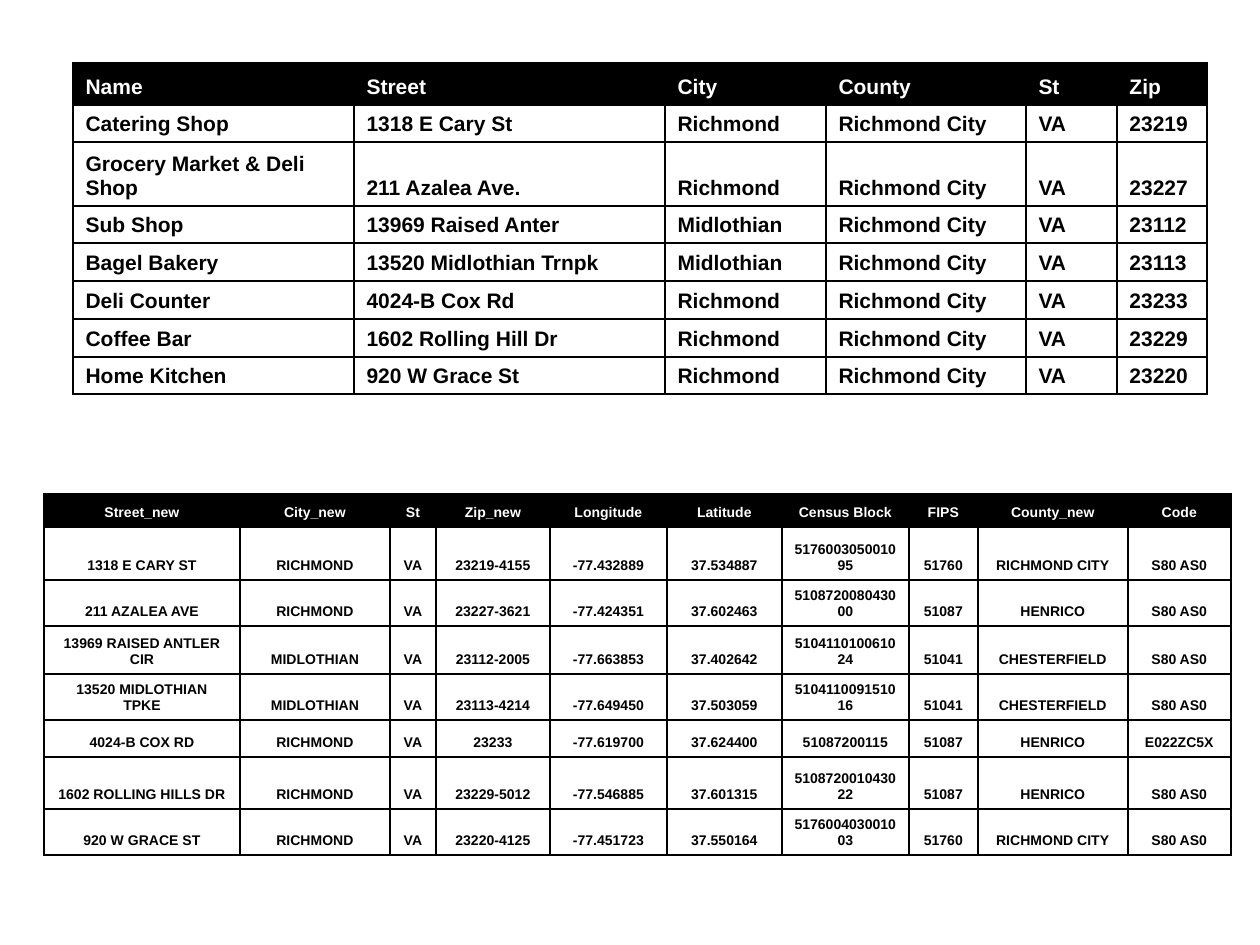
import pptx
import pptx.util
import pptx.dml.color
import pptx.enum.text
import pptx.oxml
import pptx.oxml.ns

SCALE = 914400 / 126
FONT = "Arial"
HUES = {"ink": "000000", "head": "FFFFFF"}
ALIGN = pptx.enum.text.PP_ALIGN

OLD_COLS = [281, 311, 161, 200, 91, 90]
OLD_ROWS = [42, 37, 64, 37, 38, 38, 38, 37]
OLD_DATA = [
    ["Name", "Street", "City", "County", "St", "Zip"],
    ["Catering Shop", "1318 E Cary St", "Richmond", "Richmond City", "VA", "23219"],
    ["Grocery Market & Deli Shop", "211 Azalea Ave.", "Richmond", "Richmond City", "VA", "23227"],
    ["Sub Shop", "13969 Raised Anter", "Midlothian", "Richmond City", "VA", "23112"],
    ["Bagel Bakery", "13520 Midlothian Trnpk", "Midlothian", "Richmond City", "VA", "23113"],
    ["Deli Counter", "4024-B Cox Rd", "Richmond", "Richmond City", "VA", "23233"],
    ["Coffee Bar", "1602 Rolling Hill Dr", "Richmond", "Richmond City", "VA", "23229"],
    ["Home Kitchen", "920 W Grace St", "Richmond", "Richmond City", "VA", "23220"],
]

NEW_COLS = [196, 150, 46, 114, 117, 115, 127, 69, 150, 103]
NEW_ROWS = [33, 53, 46, 48, 46, 37, 52, 46]
NEW_DATA = [
    ["Street_new", "City_new", "St", "Zip_new", "Longitude", "Latitude",
     "Census Block", "FIPS", "County_new", "Code"],
    ["1318 E CARY ST", "RICHMOND", "VA", "23219-4155", "-77.432889", "37.534887",
     "517600305001095", "51760", "RICHMOND CITY", "S80 AS0"],
    ["211 AZALEA AVE", "RICHMOND", "VA", "23227-3621", "-77.424351", "37.602463",
     "510872008043000", "51087", "HENRICO", "S80 AS0"],
    ["13969 RAISED ANTLER CIR", "MIDLOTHIAN", "VA", "23112-2005", "-77.663853", "37.402642",
     "510411010061024", "51041", "CHESTERFIELD", "S80 AS0"],
    ["13520 MIDLOTHIAN TPKE", "MIDLOTHIAN", "VA", "23113-4214", "-77.649450", "37.503059",
     "510411009151016", "51041", "CHESTERFIELD", "S80 AS0"],
    ["4024-B COX RD", "RICHMOND", "VA", "23233", "-77.619700", "37.624400",
     "51087200115", "51087", "HENRICO", "E022ZC5X"],
    ["1602 ROLLING HILLS DR", "RICHMOND", "VA", "23229-5012", "-77.546885", "37.601315",
     "510872001043022", "51087", "HENRICO", "S80 AS0"],
    ["920 W GRACE ST", "RICHMOND", "VA", "23220-4125", "-77.451723", "37.550164",
     "517600403001003", "51760", "RICHMOND CITY", "S80 AS0"],
]


def emu(px):
    return pptx.util.Emu(round(px * SCALE))


def hue(name):
    return pptx.dml.color.RGBColor.from_string(HUES[name])


def frame(cell):
    props = cell._tc.get_or_add_tcPr()
    for side in ("lnL", "lnR", "lnT", "lnB"):
        props.append(pptx.oxml.parse_xml(
            f'<a:{side} {pptx.oxml.ns.nsdecls("a")} w="12700"><a:solidFill>'
            f'<a:srgbClr val="{HUES["ink"]}"/></a:solidFill></a:{side}>'))


def fill_cell(cell, text, size, align, is_head):
    frame(cell)
    cell.vertical_anchor = pptx.enum.text.MSO_ANCHOR.BOTTOM
    if is_head:
        cell.fill.solid()
        cell.fill.fore_color.rgb = hue("ink")
    else:
        cell.fill.background()
    para = cell.text_frame.paragraphs[0]
    para.alignment = align
    run = para.add_run()
    run.text = text
    run.font.name = FONT
    run.font.size = pptx.util.Pt(size)
    run.font.bold = True
    run.font.color.rgb = hue("head" if is_head else "ink")


def add_grid(slide, box, cols, rows, data, size, align):
    table = slide.shapes.add_table(len(rows), len(cols), *map(emu, box)).table
    table.first_row = False
    table.horz_banding = False
    for col, width in zip(table.columns, cols):
        col.width = emu(width)
    for row, height in zip(table.rows, rows):
        row.height = emu(height)
    for r, line in enumerate(data):
        for c, text in enumerate(line):
            fill_cell(table.cell(r, c), text, size, align, r == 0)


def add_old(slide, box):
    add_grid(slide, box, OLD_COLS, OLD_ROWS, OLD_DATA, 12, ALIGN.LEFT)


def add_new(slide, box):
    add_grid(slide, box, NEW_COLS, NEW_ROWS, NEW_DATA, 8, ALIGN.CENTER)


def main():
    deck = pptx.Presentation()
    deck.slide_width = emu(1260)
    deck.slide_height = emu(945)
    slide = deck.slides.add_slide(deck.slide_layouts[6])
    add_old(slide, (73, 63, sum(OLD_COLS), sum(OLD_ROWS)))
    add_new(slide, (44, 494, sum(NEW_COLS), sum(NEW_ROWS)))
    deck.save("out.pptx")


if __name__ == "__main__":
    main()
